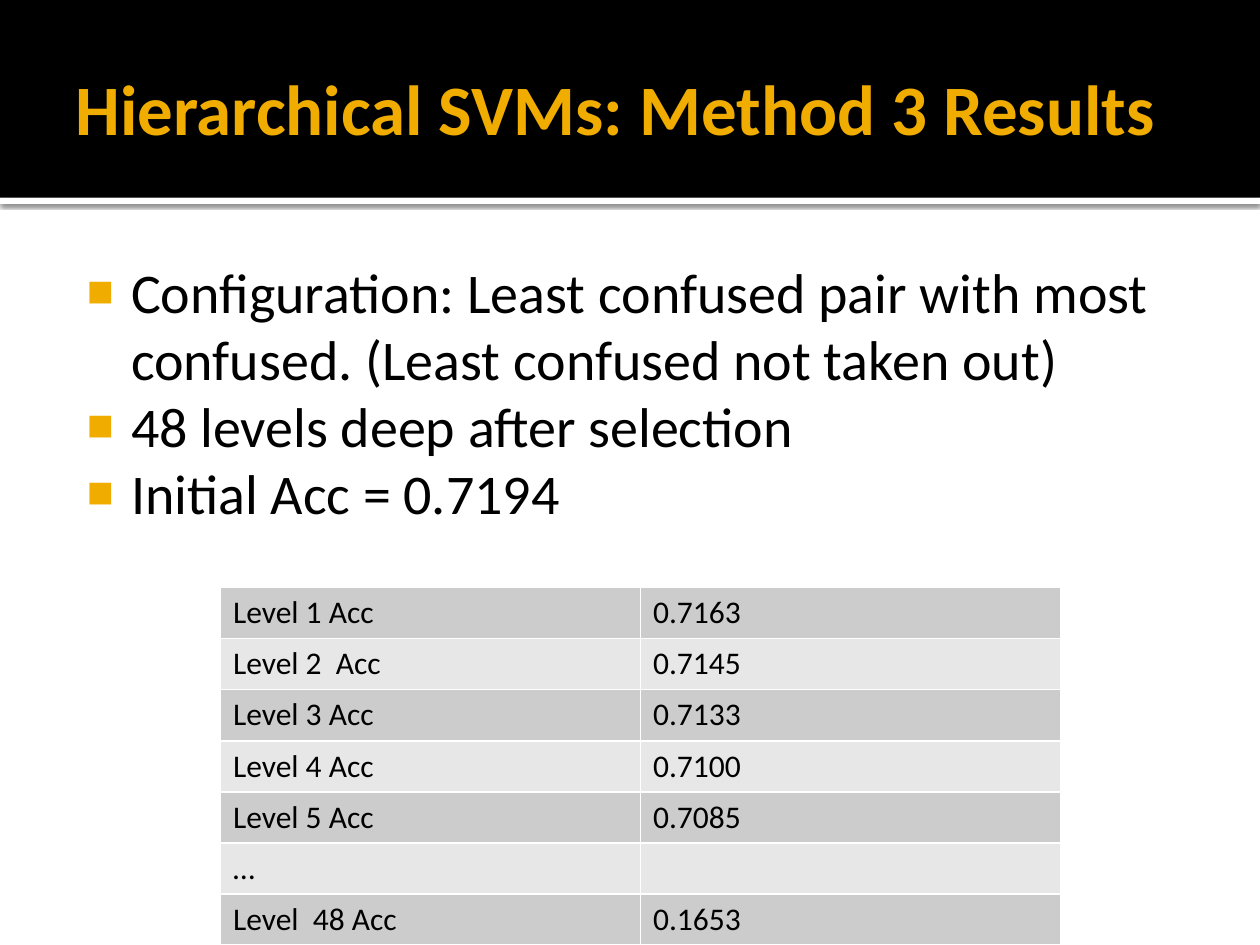
from lxml.etree import SubElement
from pptx import Presentation
from pptx.dml.color import RGBColor
from pptx.enum.shapes import MSO_SHAPE
from pptx.enum.text import MSO_ANCHOR, MSO_AUTO_SIZE, PP_ALIGN
from pptx.oxml import parse_xml
from pptx.oxml.ns import nsdecls, qn
from pptx.util import Pt

TITLE = "Hierarchical SVMs: Method 3 Results"
BULLETS = [
    "Configuration: Least confused pair with most confused. (Least confused not taken out)",
    "48 levels deep after selection",
    "Initial Acc = 0.7194",
]
ACCURACY = [
    ("Level 1 Acc", "0.7163"),
    ("Level 2  Acc", "0.7145"),
    ("Level 3 Acc", "0.7133"),
    ("Level 4 Acc", "0.7100"),
    ("Level 5 Acc", "0.7085"),
    ("…", ""),
    ("Level  48 Acc", "0.1653"),
]
THEME = {
    "title": {"name": "Calibri", "size": Pt(40.5), "bold": True, "color": "F0AD00"},
    "body": {"name": "Calibri", "size": Pt(32), "bold": False, "color": "000000"},
    "cell": {"name": "Calibri", "size": Pt(18), "bold": False, "color": "000000"},
    "bullet": "F0AD00",
    "header": "000000",
    "rule": "FFFFFF",
    "bands": ("CCCCCC", "E7E7E7"),
}
BAND_HEIGHT, RULE_HEIGHT = 113, 3.6
TABLE_LEFT, TABLE_TOP, COL_WIDTH, ROW_HEIGHT = 126, 335.7, 240, 29.2


def write(p, text, style):
    r = p.add_run()
    r.text = text
    for key, value in THEME[style].items():
        if key == "color":
            r.font.color.rgb = RGBColor.from_string(value)
        else:
            setattr(r.font, key, value)


def frame(sp, box, margins, anchor):
    sp.left, sp.top, sp.width, sp.height = map(Pt, box)
    tf = sp.text_frame
    values = dict(zip(("margin_left", "margin_top", "margin_right", "margin_bottom"), map(Pt, margins)))
    values.update(word_wrap=True, auto_size=MSO_AUTO_SIZE.NONE, vertical_anchor=anchor)
    for key, value in values.items():
        setattr(tf, key, value)
    return tf


def band(s, top, height, color):
    sp = s.shapes.add_shape(MSO_SHAPE.RECTANGLE, 0, Pt(top), prs.slide_width, Pt(height))
    sp.shadow.inherit = False
    sp.fill.solid()
    sp.fill.fore_color.rgb = RGBColor.from_string(color)
    sp.line.fill.background()
    s.shapes._spTree.insert(2, sp._element)
    return sp


def cast_shadow(sp):
    effects = sp._element.spPr.find(qn("a:effectLst"))
    effects.append(parse_xml(
        f'<a:outerShdw {nsdecls("a")} blurRad="{Pt(2.5)}" dist="{Pt(0.8)}" dir="5400000" rotWithShape="0">'
        '<a:srgbClr val="000000"><a:alpha val="60000"/></a:srgbClr></a:outerShdw>'))


def bullet(p):
    pPr = p._p.get_or_add_pPr()
    pPr.set("marL", str(Pt(34.56)))
    pPr.set("indent", str(Pt(-25.2)))
    color = SubElement(pPr, qn("a:buClr"))
    SubElement(color, qn("a:srgbClr"), val=THEME["bullet"])
    SubElement(pPr, qn("a:buSzPct"), val="80000")
    SubElement(pPr, qn("a:buFont"), typeface="Arial")
    SubElement(pPr, qn("a:buChar"), char="■")


def border(cell):
    tcPr = cell._tc.get_or_add_tcPr()
    for i, side in enumerate(("lnL", "lnR", "lnT", "lnB")):
        tcPr.insert(i, parse_xml(
            f'<a:{side} {nsdecls("a")} w="{Pt(1)}"><a:solidFill><a:srgbClr val="{THEME["rule"]}"/>'
            f'</a:solidFill></a:{side}>'))


prs = Presentation()
prs.slide_width, prs.slide_height = Pt(720), Pt(540)
s = prs.slides.add_slide(prs.slide_layouts[1])

band(s, 0, BAND_HEIGHT, THEME["header"])
cast_shadow(band(s, BAND_HEIGHT, RULE_HEIGHT, THEME["rule"]))

tf = frame(s.shapes.title, (36, 12.2, 648, 98.6), (7.2, 3.6, 3.6, 3.6), MSO_ANCHOR.MIDDLE)
p = tf.paragraphs[0]
p.alignment = PP_ALIGN.LEFT
write(p, TITLE, "title")

tf = frame(s.placeholders[1], (36, 139.7, 648, 364.3), (4.32, 7.2, 7.2, 3.6), MSO_ANCHOR.TOP)
for i, text in enumerate(BULLETS):
    p = tf.add_paragraph() if i else tf.paragraphs[0]
    p.space_before = Pt(0)
    bullet(p)
    write(p, text, "body")

table = s.shapes.add_table(
    len(ACCURACY), 2, Pt(TABLE_LEFT), Pt(TABLE_TOP),
    Pt(2 * COL_WIDTH), Pt(len(ACCURACY) * ROW_HEIGHT)).table
table.first_row = False
for col in table.columns:
    col.width = Pt(COL_WIDTH)
for i, values in enumerate(ACCURACY):
    table.rows[i].height = Pt(ROW_HEIGHT)
    for cell, text in zip(table.rows[i].cells, values):
        cell.fill.solid()
        cell.fill.fore_color.rgb = RGBColor.from_string(THEME["bands"][i % 2])
        border(cell)
        if text:
            write(cell.text_frame.paragraphs[0], text, "cell")

prs.save("out.pptx")
